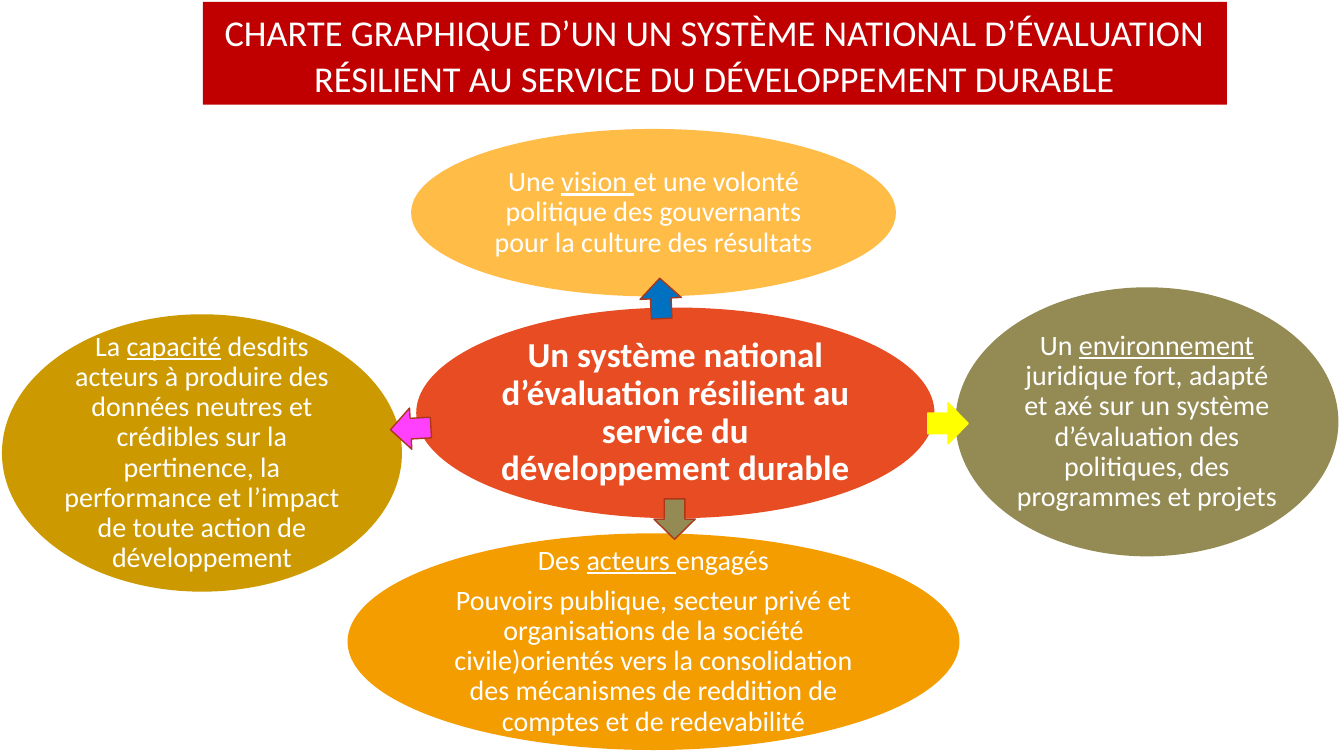
from pptx import Presentation
from pptx.dml.color import RGBColor
from pptx.enum.shapes import MSO_SHAPE
from pptx.enum.text import MSO_ANCHOR, MSO_AUTO_SIZE, PP_ALIGN
from pptx.util import Cm, Pt

COLORS = {
    "white": "FFFFFF", "title": "C00000", "core": "E84C22", "vision": "FFBD47",
    "capacity": "CC9900", "setting": "948A54", "actors": "F49D00",
    "outline": "AC3819", "pink": "FF40FF", "blue": "0070C0", "yellow": "FFFF00",
}

# Fill, box in cm, paragraphs; "_" encloses underlined words
PILLARS = [
    ("vision", (10.36, 3.25, 12.22, 4.22),
     ["Une _vision _et une volonté politique des gouvernants pour la culture des résultats"]),
    ("capacity", (0.05, 7.92, 10.08, 6.99),
     ["La _capacité_ desdits acteurs à produire des données neutres et crédibles "
      "sur la pertinence, la performance et l’impact de toute action de développement"]),
    ("setting", (24.08, 7.24, 9.65, 6.78),
     ["Un _environnement_ juridique fort, adapté et axé sur un système d’évaluation "
      "des politiques, des programmes et projets"]),
    ("actors", (8.76, 13.44, 15.42, 5.46),
     ["Des _acteurs _engagés",
      "Pouvoirs publique, secteur privé et organisations de la société civile)orientés "
      "vers la consolidation des mécanismes de reddition de comptes et de redevabilité"]),
]

# Fill, outline, left and top in cm, rotation
ARROWS = [
    ("pink", "outline", 9.83, 10.29, 266.8),
    ("blue", "outline", 16.13, 7.01, 357.2),
    ("yellow", "yellow", 23.37, 10.16, 90),
    ("setting", "outline", 16.48, 12.57, 180),
]


class Charter:
    font = "Calibri"
    arrow_size = (1.04, 1.02)

    def __init__(self, prs):
        self.slide = prs.slides.add_slide(prs.slide_layouts[5])

    def color(self, name):
        return RGBColor.from_string(COLORS[name])

    def fill(self, sp, name):
        sp.fill.solid()
        sp.fill.fore_color.rgb = self.color(name)

    def style_paragraph(self, p, size, spacing, bold=False):
        p.alignment = PP_ALIGN.CENTER
        p.line_spacing = spacing
        for r in p.runs:
            r.font.name = self.font
            r.font.size = Pt(size)
            r.font.bold = bold
            r.font.color.rgb = self.color("white")

    def title(self, text, box):
        sp = self.slide.shapes.title
        sp.left, sp.top, sp.width, sp.height = map(Cm, box)
        self.fill(sp, "title")
        tf = sp.text_frame
        tf.text = text
        tf.auto_size = MSO_AUTO_SIZE.NONE
        tf.vertical_anchor = MSO_ANCHOR.MIDDLE
        self.style_paragraph(tf.paragraphs[0], 26, 1.07)

    def shape(self, kind, box, fill):
        sp = self.slide.shapes.add_shape(kind, *map(Cm, box))
        sp.shadow.inherit = False
        self.fill(sp, fill)
        return sp

    def oval(self, fill, box, paragraphs, size=20, bold=False):
        sp = self.shape(MSO_SHAPE.OVAL, box, fill)
        sp.line.fill.background()
        tf = sp.text_frame
        tf.word_wrap = True
        tf.vertical_anchor = MSO_ANCHOR.MIDDLE
        tf.margin_left = tf.margin_right = tf.margin_top = tf.margin_bottom = Cm(0.08)
        for i, text in enumerate(paragraphs):
            p = tf.add_paragraph() if i else tf.paragraphs[0]
            for j, part in enumerate(text.split("_")):
                r = p.add_run()
                r.text = part
                r.font.underline = j % 2 == 1
            self.style_paragraph(p, size, 0.9, bold)
            p.space_after = Pt(0.35 * size)

    def arrow(self, fill, outline, left, top, rotation):
        sp = self.shape(MSO_SHAPE.UP_ARROW, (left, top, *self.arrow_size), fill)
        sp.line.color.rgb = self.color(outline)
        sp.line.width = Pt(1)
        sp.rotation = rotation


def main():
    prs = Presentation()
    prs.slide_width, prs.slide_height = Cm(33.87), Cm(19.05)
    charter = Charter(prs)
    charter.title("CHARTE GRAPHIQUE D’UN UN SYSTÈME NATIONAL D’ÉVALUATION "
                  "RÉSILIENT AU SERVICE DU DÉVELOPPEMENT DURABLE",
                  (5.11, 0.05, 25.81, 2.59))
    for pillar in PILLARS:
        charter.oval(*pillar)
    charter.oval("core", (10.49, 7.75, 13.06, 5.31),
                 ["Un système national d’évaluation résilient au service "
                  "du développement durable"], size=25, bold=True)
    for arrow in ARROWS:
        charter.arrow(*arrow)
    prs.save("out.pptx")


if __name__ == "__main__":
    main()
